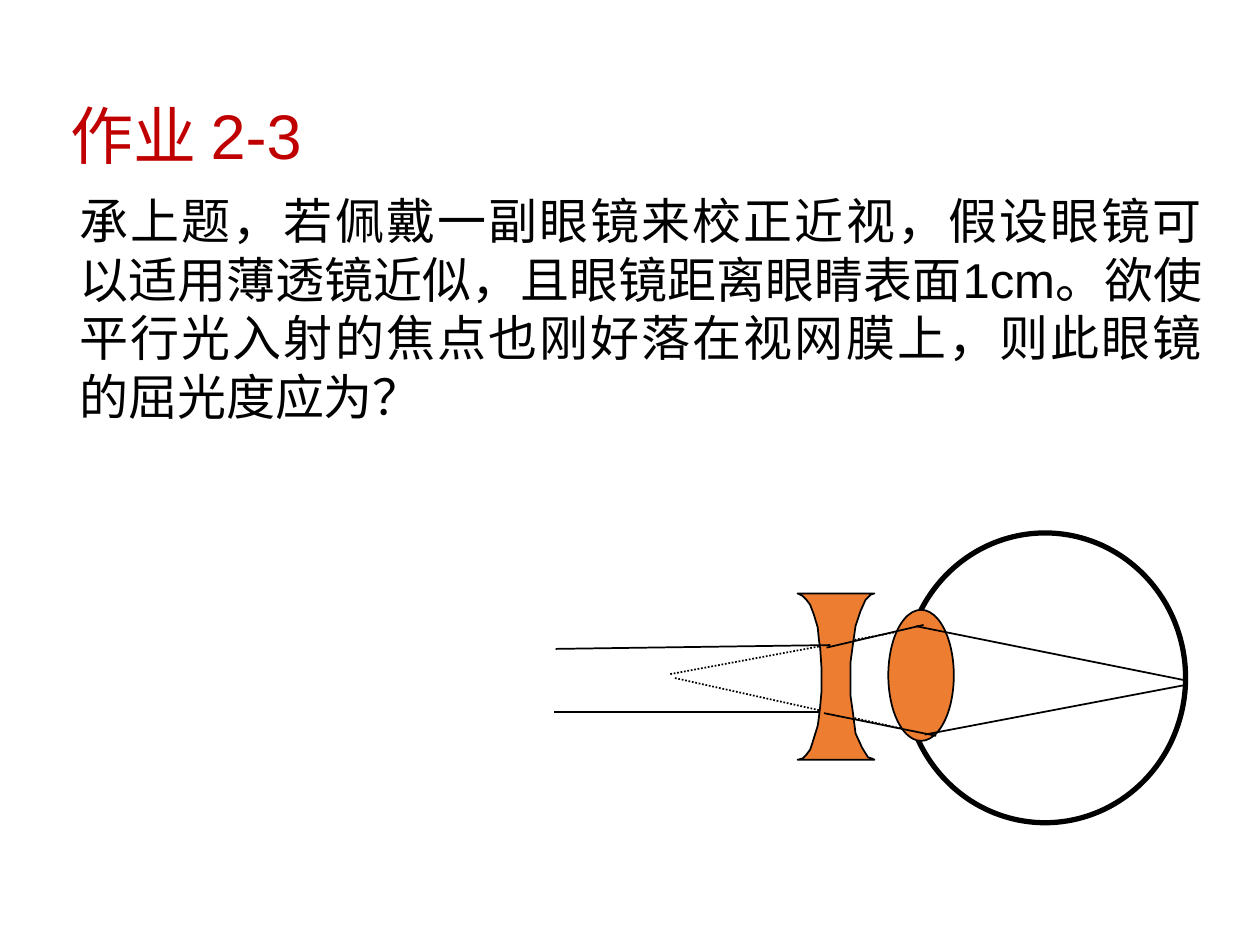
"""Build a homework slide on correcting short sight with a diverging lens."""
from lxml.etree import SubElement
from pptx import Presentation
from pptx.dml.color import RGBColor
from pptx.enum.dml import MSO_LINE_DASH_STYLE as DASH
from pptx.enum.shapes import MSO_CONNECTOR, MSO_SHAPE
from pptx.enum.text import MSO_ANCHOR as ANCHOR, PP_ALIGN as ALIGN
from pptx.oxml.ns import qn
from pptx.util import Inches, Pt

COLORS = {"title": "C00000", "ink": "000000", "lens": "ED7D31"}
QUESTION = (
    "承上题，若佩戴一副眼镜来校正近视，假设眼镜可以适用薄透镜近似，"
    "且眼镜距离眼睛表面1cm。欲使平行光入射的焦点也刚好落在视网膜上，"
    "则此眼镜的屈光度应为？"
)
VIRTUAL_RAYS = [((5.32, 5.35), (7.31, 4.98)), ((7.28, 5.81), (5.35, 5.38))]
EYE_RAYS = [((7.27, 4.97), (9.41, 5.4)), ((7.34, 5.83), (9.39, 5.44))]
INCOMING_RAYS = [
    ((4.4, 5.65), (6.51, 5.65)), ((6.54, 5.66), (7.43, 5.84)),
    ((4.41, 5.15), (6.59, 5.12)), ((6.56, 5.14), (7.33, 4.96)),
]
GLASSES = [
    (6.33, 4.71), (6.37, 4.73), (6.4, 4.76), (6.43, 4.8), (6.46, 4.88),
    (6.49, 4.98), (6.5, 5.08), (6.51, 5.15), (6.52, 5.3), (6.52, 5.49),
    (6.51, 5.6), (6.5, 5.69), (6.49, 5.76), (6.45, 5.89), (6.43, 5.95),
    (6.4, 5.99), (6.37, 6.02), (6.33, 6.03), (6.94, 6.03), (6.92, 6.02),
    (6.89, 6.01), (6.87, 5.98), (6.84, 5.93), (6.79, 5.82), (6.77, 5.66),
    (6.75, 5.52), (6.75, 5.26), (6.77, 5.11), (6.79, 4.97), (6.83, 4.85),
    (6.87, 4.76), (6.91, 4.72), (6.94, 4.71),
]


def color(name):
    return RGBColor.from_string(COLORS[name])


def add_text(page, text, area, *, size, ink, align=ALIGN.LEFT,
             anchor=ANCHOR.TOP, top_inset=0, spacing=None):
    box = page.shapes.add_textbox(*map(Inches, area))
    frame = box.text_frame
    frame.word_wrap = True
    frame.vertical_anchor = anchor
    frame.margin_left = frame.margin_right = frame.margin_bottom = 0
    frame.margin_top = Inches(top_inset)
    para = frame.paragraphs[0]
    para.alignment = align
    para.line_spacing = spacing
    span = para.add_run()
    span.text = text
    span.font.name = "Arial"
    span.font.size = Pt(size)
    span.font.color.rgb = color(ink)


def style_shape(shape, fill=None, weight=1):
    shape.shadow.inherit = False
    if fill:
        shape.fill.solid()
        shape.fill.fore_color.rgb = color(fill)
    else:
        shape.fill.background()
    shape.line.color.rgb = color("ink")
    shape.line.width = Pt(weight)


def add_ellipse(page, area, **style):
    style_shape(page.shapes.add_shape(MSO_SHAPE.OVAL, *map(Inches, area)), **style)


def add_outline(page, points, **style):
    corners = [(Inches(x), Inches(y)) for x, y in points]
    builder = page.shapes.build_freeform(*corners[0])
    builder.add_line_segments(corners[1:], close=True)
    style_shape(builder.convert_to_shape(), **style)


def add_rays(page, rays, dash=None):
    for start, end in rays:
        ray = page.shapes.add_connector(
            MSO_CONNECTOR.STRAIGHT, *map(Inches, start + end))
        ray.line.color.rgb = color("ink")
        ray.line.width = Pt(1)
        ray.line.dash_style = dash
        SubElement(ray._element.spPr, qn("a:effectLst"))


def main():
    deck = Presentation()
    deck.slide_width, deck.slide_height = Inches(10), Inches(7.5)
    page = deck.slides.add_slide(deck.slide_layouts[6])
    add_text(page, "作业 2-3", (0.56, 0.36, 5.17, 0.99), size=36, ink="title",
             anchor=ANCHOR.MIDDLE, top_inset=0.29, spacing=Pt(52.8))
    add_text(page, QUESTION, (0.63, 1.51, 8.91, 1.88), size=28, ink="ink",
             align=ALIGN.JUSTIFY)
    add_rays(page, VIRTUAL_RAYS, dash=DASH.ROUND_DOT)
    add_ellipse(page, (7.18, 4.23, 2.23, 2.3), weight=3)
    add_ellipse(page, (7.05, 4.84, 0.52, 1.04), fill="lens")
    add_rays(page, EYE_RAYS)
    add_outline(page, GLASSES, fill="lens")
    add_rays(page, INCOMING_RAYS)
    deck.save("out.pptx")


if __name__ == "__main__":
    main()
